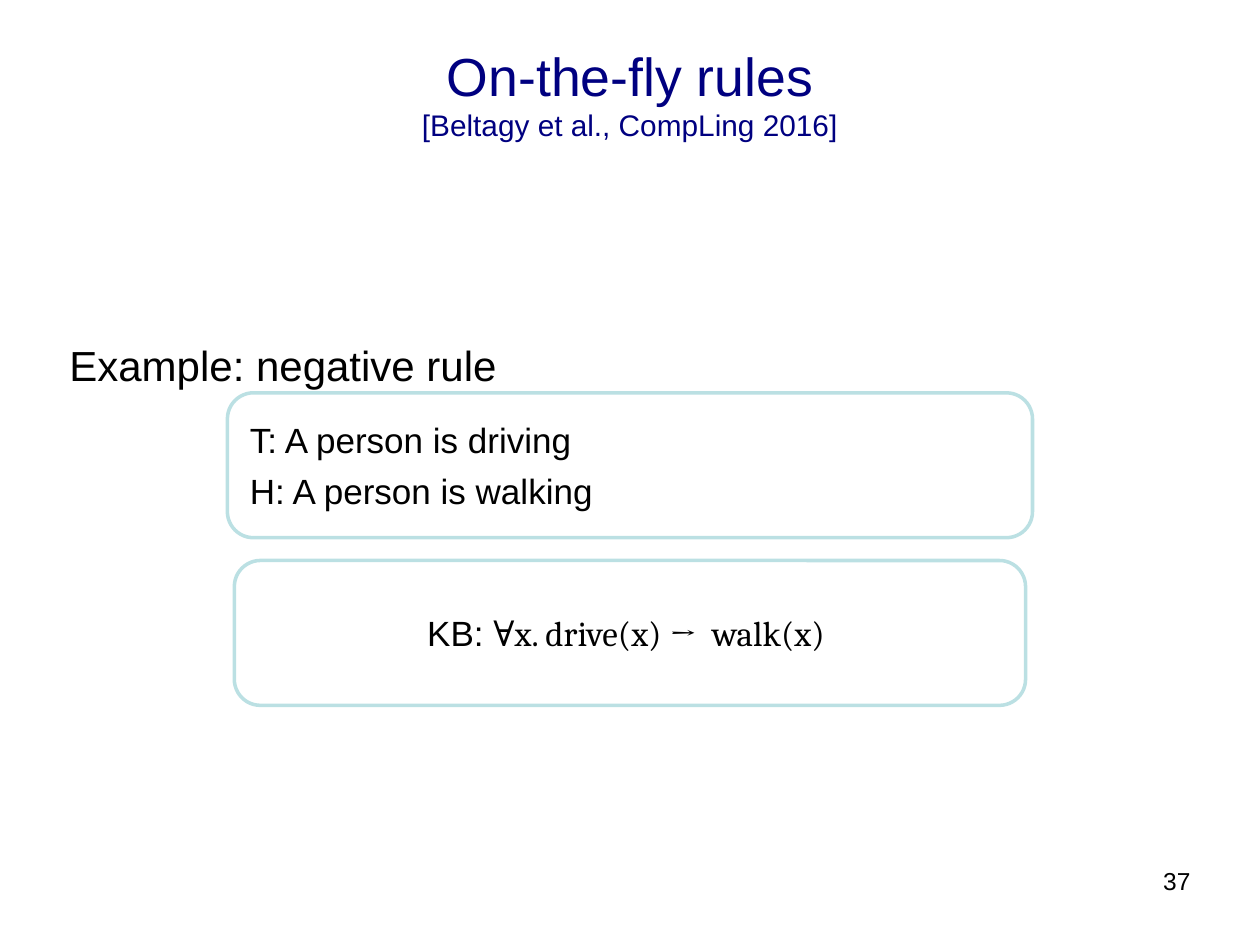
"""Build the slide on on-the-fly rules with its negative rule example."""
from dataclasses import dataclass

from pptx import Presentation
from pptx.dml.color import RGBColor
from pptx.enum import shapes, text
from pptx.util import Cm, Pt

NAVY = RGBColor(0x00, 0x00, 0x80)
BLACK = RGBColor(0x00, 0x00, 0x00)
WHITE = RGBColor(0xFF, 0xFF, 0xFF)
PALE_TEAL = RGBColor(0xBB, 0xE0, 0xE3)
SLIDE_WIDTH = 25.4
INSET = 0.13
LEFT, CENTER, RIGHT = text.PP_ALIGN.LEFT, text.PP_ALIGN.CENTER, text.PP_ALIGN.RIGHT


@dataclass
class Line:
    runs: list[tuple[str, str]]
    size: float
    color: RGBColor = BLACK
    alignment: text.PP_ALIGN = LEFT
    space_before: float = 0


@dataclass
class Panel:
    top: float
    width: float
    lines: list[Line]
    left_inset: float = INSET


def write(frame, lines: list[Line], left_inset: float = INSET, wrap: bool = True) -> None:
    """Fill a text frame with formatted lines."""
    frame.auto_size = text.MSO_AUTO_SIZE.NONE
    frame.word_wrap = wrap
    frame.vertical_anchor = text.MSO_ANCHOR.MIDDLE
    frame.margin_left = Cm(left_inset)
    frame.margin_top = frame.margin_right = frame.margin_bottom = Cm(INSET)
    for index, line in enumerate(lines):
        paragraph = frame.add_paragraph() if index else frame.paragraphs[0]
        paragraph.alignment = line.alignment
        paragraph.space_before = Pt(line.space_before)
        paragraph.font.size = Pt(line.size)
        paragraph.font.color.rgb = line.color
        fonts = {font for _, font in line.runs}
        if len(fonts) == 1:
            paragraph.font.name = fonts.pop()
        for words, font in line.runs:
            run = paragraph.add_run()
            run.text = words
            if paragraph.font.name is None:
                run.font.name = font


def add_label(slide, left: float, top: float, width: float, height: float,
              line: Line, wrap: bool = True) -> None:
    """Add a one-line text box."""
    box = slide.shapes.add_textbox(Cm(left), Cm(top), Cm(width), Cm(height))
    write(box.text_frame, [line], wrap=wrap)


def add_panel(slide, panel: Panel) -> None:
    """Add a rounded panel centred across the slide."""
    left = (SLIDE_WIDTH - panel.width) / 2
    shape = slide.shapes.add_shape(
        shapes.MSO_SHAPE.ROUNDED_RECTANGLE,
        Cm(left), Cm(panel.top), Cm(panel.width), Cm(2.92))
    shape.adjustments[0] = 0.18
    shape.shadow.inherit = False
    shape.fill.solid()
    shape.fill.fore_color.rgb = WHITE
    shape.line.color.rgb = PALE_TEAL
    shape.line.width = Pt(2)
    write(shape.text_frame, panel.lines, panel.left_inset)


def main() -> None:
    """Assemble and save the presentation."""
    presentation = Presentation()
    presentation.slide_width, presentation.slide_height = Cm(SLIDE_WIDTH), Cm(19.05)
    slide = presentation.slides.add_slide(presentation.slide_layouts[5])

    title = slide.shapes.title
    title.left, title.top, title.width, title.height = Cm(1.27), Cm(0.76), Cm(22.86), Cm(2.21)
    write(title.text_frame, [
        Line([("On-the-fly rules", "Arial")], 30.6, NAVY, CENTER),
        Line([("[Beltagy et al., CompLing 2016]", "Arial")], 17, NAVY, CENTER),
    ])

    add_label(slide, 23.29, 17.35, 0.84, 0.81,
              Line([("37", "Arial")], 14, alignment=RIGHT), wrap=False)
    add_label(slide, 1.27, 6.6, 22.86, 1.52,
              Line([("Example: negative rule", "Arial")], 24))

    sentences = ["T: A person is driving", "H: A person is walking"]
    rule = [("KB: ", "Arial"), ("∀x. drive(x) →  walk(x) ", "Cambria")]
    for panel in (
        Panel(7.92, 16.23, [Line([(sentence, "Arial")], 20, space_before=5)
                            for sentence in sentences], left_inset=0.3),
        Panel(11.3, 15.95, [Line(rule, 20, alignment=CENTER, space_before=5)]),
    ):
        add_panel(slide, panel)

    presentation.save("out.pptx")


if __name__ == "__main__":
    main()
